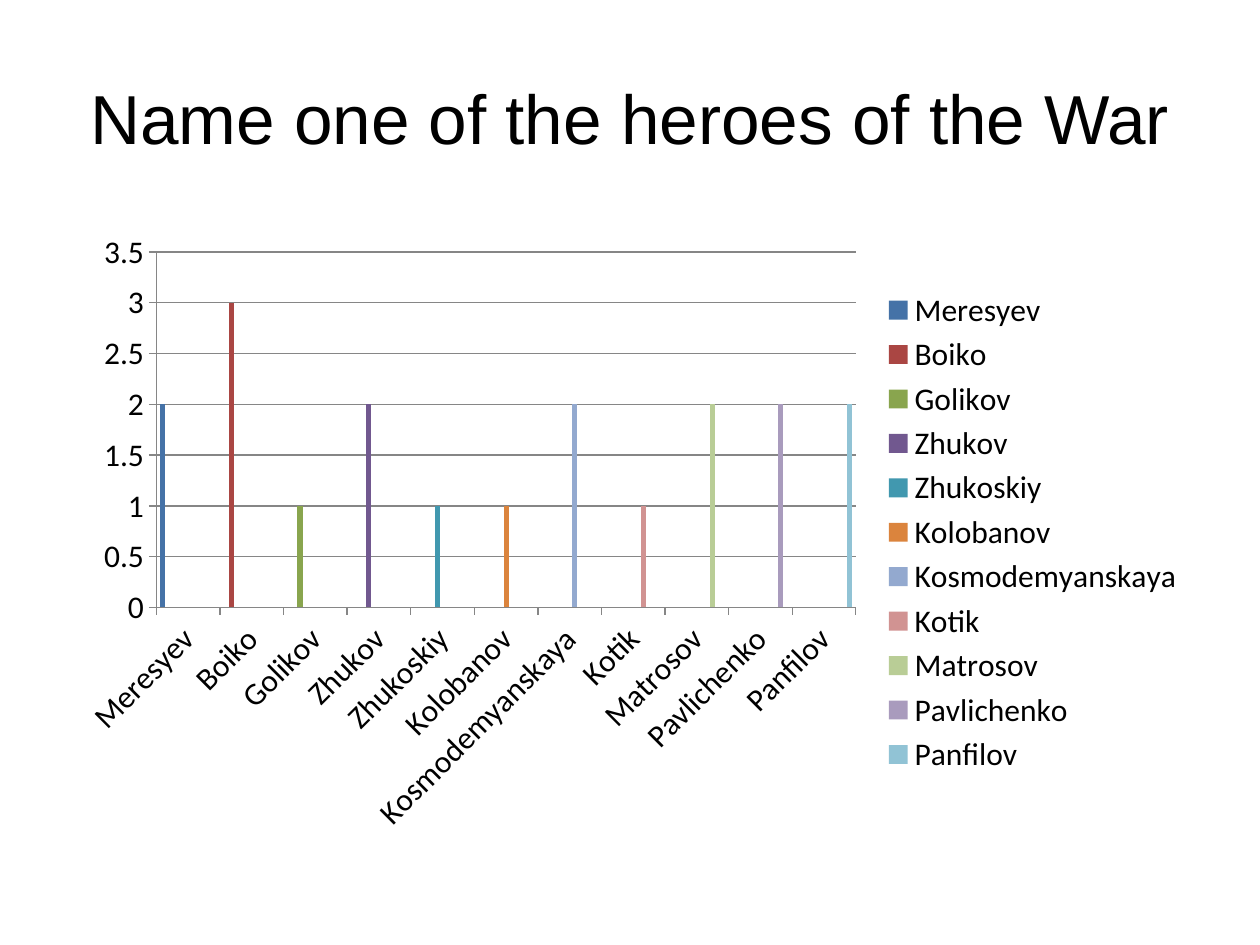
from pptx import Presentation
from pptx.chart.data import CategoryChartData
from pptx.dml.color import RGBColor
from pptx.enum.chart import XL_CHART_TYPE, XL_LEGEND_POSITION, XL_TICK_MARK
from pptx.enum.text import MSO_ANCHOR, PP_ALIGN
from pptx.util import Inches, Pt

TITLE = "Name one of the heroes of the War"
HEROES = [
    ("Meresyev", 2, "4572A7"),
    ("Boiko", 3, "AA4643"),
    ("Golikov", 1, "89A54E"),
    ("Zhukov", 2, "71588F"),
    ("Zhukoskiy", 1, "4198AF"),
    ("Kolobanov", 1, "DB843D"),
    ("Kosmodemyanskaya", 2, "93A9CF"),
    ("Kotik", 1, "D19392"),
    ("Matrosov", 2, "B9CD96"),
    ("Pavlichenko", 2, "A99BBD"),
    ("Panfilov", 2, "91C3D5"),
]
WIDTH, HEIGHT = Inches(10), Inches(7.5)
MARGIN = int(WIDTH * 0.05)
CONTENT_WIDTH = WIDTH - 2 * MARGIN
LINE_COLOR = "868686"


def color(value):
    return RGBColor.from_string(value)


def style_font(font, name, size):
    font.name = name
    font.size = Pt(size)
    font.color.rgb = color("000000")


def style_line(line):
    line.color.rgb = color(LINE_COLOR)
    line.width = Pt(0.75)


def add_title(slide):
    title = slide.shapes.title
    title.left, title.top = MARGIN, int(HEIGHT * 0.04)
    title.width, title.height = CONTENT_WIDTH, Inches(1.25)
    frame = title.text_frame
    frame.text = TITLE
    frame.word_wrap = True
    frame.vertical_anchor = MSO_ANCHOR.MIDDLE
    paragraph = frame.paragraphs[0]
    paragraph.alignment = PP_ALIGN.CENTER
    style_font(paragraph.font, "Arial", 39.6)


def add_hero_chart(slide):
    data = CategoryChartData(number_format="General")
    data.categories = [name for name, _, _ in HEROES]
    for position, (name, votes, _) in enumerate(HEROES):
        values = [None] * len(HEROES)
        values[position] = votes
        data.add_series(name, values)

    chart = slide.shapes.add_chart(
        XL_CHART_TYPE.COLUMN_CLUSTERED, MARGIN, Inches(1.75),
        CONTENT_WIDTH, int(HEIGHT * 0.66), data).chart
    chart.has_title = False
    style_font(chart.font, "Calibri", 18)
    chart.has_legend = True
    chart.legend.position = XL_LEGEND_POSITION.RIGHT
    chart.legend.include_in_layout = False

    plot = chart.plots[0]
    plot.gap_width = 150
    plot.vary_by_categories = False
    for series, (_, _, fill) in zip(plot.series, HEROES):
        series.format.fill.solid()
        series.format.fill.fore_color.rgb = color(fill)

    for axis in (chart.category_axis, chart.value_axis):
        axis.major_tick_mark = XL_TICK_MARK.OUTSIDE
        axis.minor_tick_mark = XL_TICK_MARK.NONE
        style_line(axis.format.line)
        style_font(axis.tick_labels.font, "Calibri", 18)
    label_body = chart.category_axis._element.txPr.find(
        "{http://schemas.openxmlformats.org/drawingml/2006/main}bodyPr")
    label_body.set("rot", str(-45 * 60000))

    value_axis = chart.value_axis
    value_axis.minimum_scale, value_axis.maximum_scale = 0, 3.5
    value_axis.major_unit = 0.5
    value_axis.has_major_gridlines = True
    style_line(value_axis.major_gridlines.format.line)


def main():
    presentation = Presentation()
    presentation.slide_width, presentation.slide_height = WIDTH, HEIGHT
    slide = presentation.slides.add_slide(presentation.slide_layouts[5])
    add_title(slide)
    add_hero_chart(slide)
    presentation.save("out.pptx")


if __name__ == "__main__":
    main()
